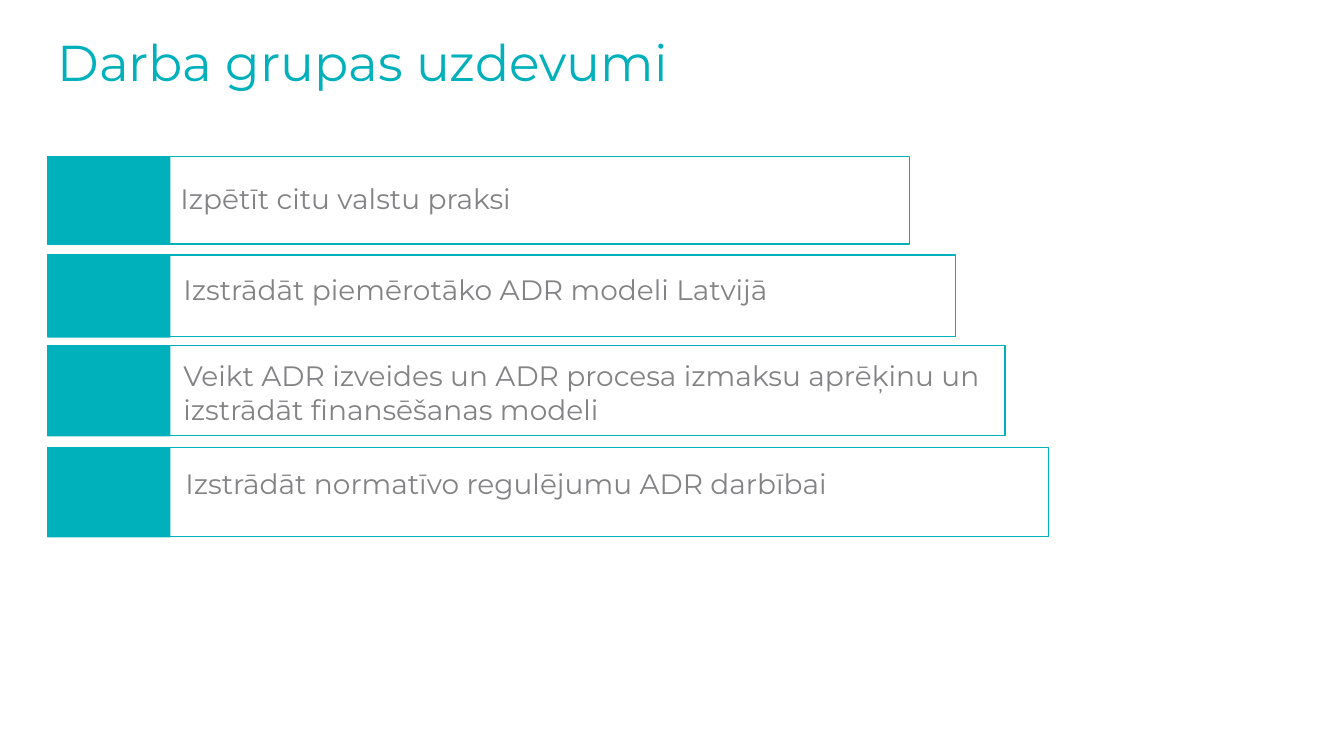
from pptx import Presentation
from pptx.dml.color import RGBColor
from pptx.enum import shapes, text
from pptx.util import Inches, Pt

COLORS = {"teal": "00B0BA", "grey": "838386"}
FONT = "Montserrat"
LEFT = 0.47
MARKER_WIDTH = 1.22

# top, height, frame width, label left offset, label top offset, label width, label height, wording
TASKS = [
    (1.55, 0.87, 8.55, 1.22, 0.2, 7.3, 0.32, "Izpētīt citu valstu praksi"),
    (2.53, 0.81, 9.01, 1.25, 0.12, 8.23, 0.3, "Izstrādāt piemērotāko ADR modeli Latvijā"),
    (3.43, 0.89, 9.5, 1.25, 0.08, 8.14, 0.77,
     "Veikt ADR izveides un ADR procesa izmaksu aprēķinu un izstrādāt finansēšanas modeli"),
    (4.44, 0.88, 9.93, 1.27, 0.14, 9.06, 0.32, "Izstrādāt normatīvo regulējumu ADR darbībai"),
]


def color(name):
    return RGBColor.from_string(COLORS[name])


def write(frame, wording, size, color_name):
    frame.word_wrap = True
    paragraph = frame.paragraphs[0]
    paragraph.text = wording
    paragraph.alignment = text.PP_ALIGN.LEFT
    font = paragraph.runs[0].font
    font.name = FONT
    font.size = Pt(size)
    font.color.rgb = color(color_name)


def add_heading(slide, left, top, width, height, wording):
    heading = slide.shapes.title
    heading.left, heading.top = Inches(left), Inches(top)
    heading.width, heading.height = Inches(width), Inches(height)
    heading.text_frame.vertical_anchor = text.MSO_ANCHOR.MIDDLE
    write(heading.text_frame, wording, 36, "teal")


def add_rectangle(group, left, top, width, height):
    rectangle = group.shapes.add_shape(
        shapes.MSO_SHAPE.RECTANGLE, Inches(left), Inches(top), Inches(width), Inches(height))
    rectangle.shadow.inherit = False
    return rectangle


def add_task(slide, left, top, width, height, label_box, wording):
    task = slide.shapes.add_group_shape()
    marker = add_rectangle(task, left, top, MARKER_WIDTH, height + 0.01)
    marker.fill.solid()
    marker.fill.fore_color.rgb = color("teal")
    marker.line.fill.background()

    dx, dy, label_width, label_height = label_box
    label = task.shapes.add_textbox(
        Inches(left + dx), Inches(top + dy), Inches(label_width), Inches(label_height))
    write(label.text_frame, wording, 20, "grey")
    label.text_frame.auto_size = text.MSO_AUTO_SIZE.SHAPE_TO_FIT_TEXT

    frame = add_rectangle(task, left, top, width, height)
    frame.fill.background()
    frame.line.color.rgb = color("teal")
    frame.line.width = Pt(1)


def main():
    deck = Presentation()
    deck.slide_width, deck.slide_height = Inches(13.33), Inches(7.5)
    slide = deck.slides.add_slide(deck.slide_layouts[5])
    add_heading(slide, LEFT, 0, 10.61, 1.21, "Darba grupas uzdevumi")
    for top, height, width, *label_box, wording in TASKS:
        add_task(slide, LEFT, top, width, height, label_box, wording)
    deck.save("out.pptx")


if __name__ == "__main__":
    main()
